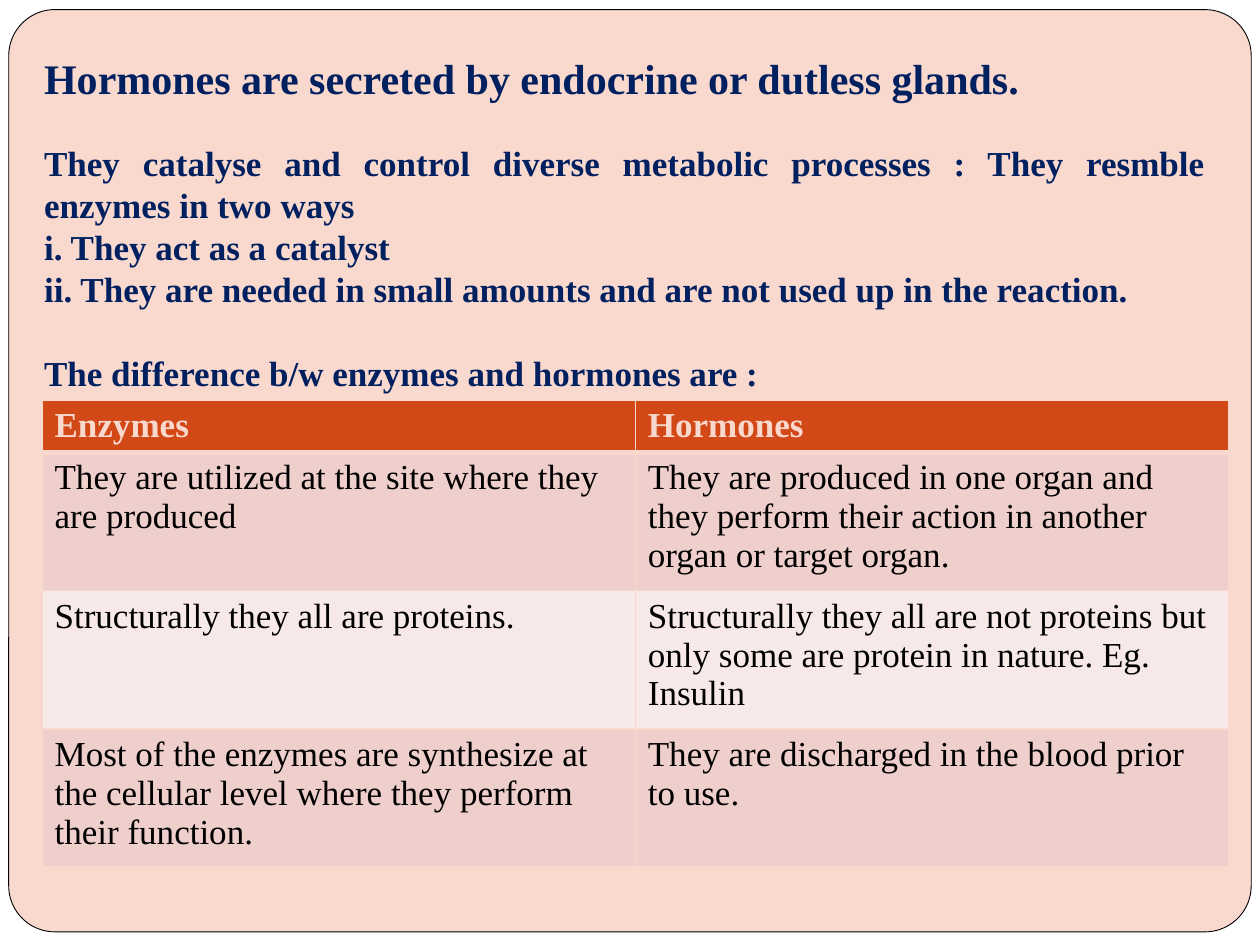
from lxml.etree import SubElement
from pptx import Presentation
from pptx.dml.color import RGBColor
from pptx.enum.shapes import MSO_SHAPE as Preset
from pptx.enum.text import MSO_ANCHOR as Anchor, MSO_AUTO_SIZE as AutoSize, PP_ALIGN as Align
from pptx.oxml.ns import qn
from pptx.util import Pt

NAVY = RGBColor(0x00, 0x20, 0x60)
BLACK = RGBColor(0x00, 0x00, 0x00)
PEACH = RGBColor(0xF9, 0xD8, 0xCD)
ORANGE = RGBColor(0xD3, 0x48, 0x17)
ROSE = RGBColor(0xEF, 0xCF, 0xCC)
PALE_ROSE = RGBColor(0xF7, 0xE9, 0xE8)

TITLE_FONT = {"name": "Times New Roman", "size": Pt(24), "bold": True}
BODY_FONT = TITLE_FONT | {"size": Pt(20)}
HEADER_FONT = BODY_FONT
CELL_FONT = BODY_FONT | {"bold": False}

TITLE = "Hormones are secreted by endocrine or dutless glands."
POINTS = [
    ("They catalyse and control diverse metabolic processes : They resmble enzymes in two ways", 0),
    ("i. They act as a catalyst", 0),
    ("ii. They are needed in small amounts and are not used up in the reaction.", 0),
    ("The difference b/w enzymes and hormones are :", 24),
]
COMPARISON = [
    ("Enzymes", "Hormones"),
    ("They are utilized at the site where they are produced",
     "They are produced in one organ and they perform their action in another organ or target organ."),
    ("Structurally they all are proteins.",
     "Structurally they all are not proteins but only some are protein in nature. Eg. Insulin"),
    ("Most of the enzymes are synthesize at the cellular level where they perform their function.",
     "They are discharged in the blood prior to use."),
]


def set_values(target, values):
    for name, value in values.items():
        setattr(target, name, value)


def format_font(paragraph, values, color):
    set_values(paragraph.font, values)
    paragraph.font.color.rgb = color


def place(shape, box):
    set_values(shape, dict(zip(("left", "top", "width", "height"), map(Pt, box))))
    set_values(shape.text_frame, {
        "word_wrap": True, "auto_size": AutoSize.NONE, "vertical_anchor": Anchor.TOP,
    })


def add_panel(slide, box):
    panel = slide.shapes.add_shape(Preset.ROUNDED_RECTANGLE, *map(Pt, box))
    panel.adjustments[0] = 0.05
    panel.shadow.inherit = False
    panel.fill.solid()
    panel.fill.fore_color.rgb = PEACH
    panel.line.color.rgb = BLACK
    panel.line.width = Pt(0.5)
    panel.element.getparent().insert(2, panel.element)


def fill_title(slide, box):
    title = slide.shapes.title
    place(title, box)
    title.text_frame.text = TITLE
    paragraph = title.text_frame.paragraphs[0]
    paragraph.alignment = Align.JUSTIFY
    format_font(paragraph, TITLE_FONT, NAVY)


def fill_points(slide, box):
    body = slide.placeholders[1]
    place(body, box)
    body.text_frame.text = "\n".join(text for text, _ in POINTS)
    for paragraph, (_, gap) in zip(body.text_frame.paragraphs, POINTS):
        set_values(paragraph, {
            "alignment": Align.JUSTIFY, "line_spacing": Pt(24), "space_before": Pt(gap),
        })
        properties = paragraph._p.get_or_add_pPr()
        properties.set("marL", "0")
        properties.set("indent", "0")
        SubElement(properties, qn("a:buNone"))
        format_font(paragraph, BODY_FONT, NAVY)


def add_borders(cell, widths):
    properties = cell._tc.get_or_add_tcPr()
    for side, width in zip("LRTB", widths):
        line = SubElement(properties, qn(f"a:ln{side}"), w=str(Pt(width)))
        fill = SubElement(line, qn("a:solidFill"))
        SubElement(fill, qn("a:srgbClr"), val=str(PEACH))


def add_comparison(slide, box, header_height):
    row_count, column_count = len(COMPARISON), len(COMPARISON[0])
    table = slide.shapes.add_table(row_count, column_count, *map(Pt, box)).table
    body_height = (box[3] - header_height) / (row_count - 1)
    for index, texts in enumerate(COMPARISON):
        is_header = index == 0
        table.rows[index].height = Pt(header_height if is_header else body_height)
        row_fill = ORANGE if is_header else ROSE if index % 2 else PALE_ROSE
        for cell, text in zip(table.rows[index].cells, texts):
            add_borders(cell, (1, 1, 3 if index == 1 else 1, 3 if is_header else 1))
            cell.fill.solid()
            cell.fill.fore_color.rgb = row_fill
            cell.text = text
            format_font(cell.text_frame.paragraphs[0],
                        HEADER_FONT if is_header else CELL_FONT,
                        PEACH if is_header else BLACK)


def build_slide(presentation):
    slide = presentation.slides.add_slide(presentation.slide_layouts[1])
    add_panel(slide, (5, 5.5, 710, 527))
    fill_title(slide, (18, 26.5, 678, 40))
    fill_points(slide, (18, 77, 678, 150))
    add_comparison(slide, (24, 228.5, 678, 267), 30)


def main():
    presentation = Presentation()
    set_values(presentation, {"slide_width": Pt(720), "slide_height": Pt(540)})
    build_slide(presentation)
    presentation.save("out.pptx")


if __name__ == "__main__":
    main()
